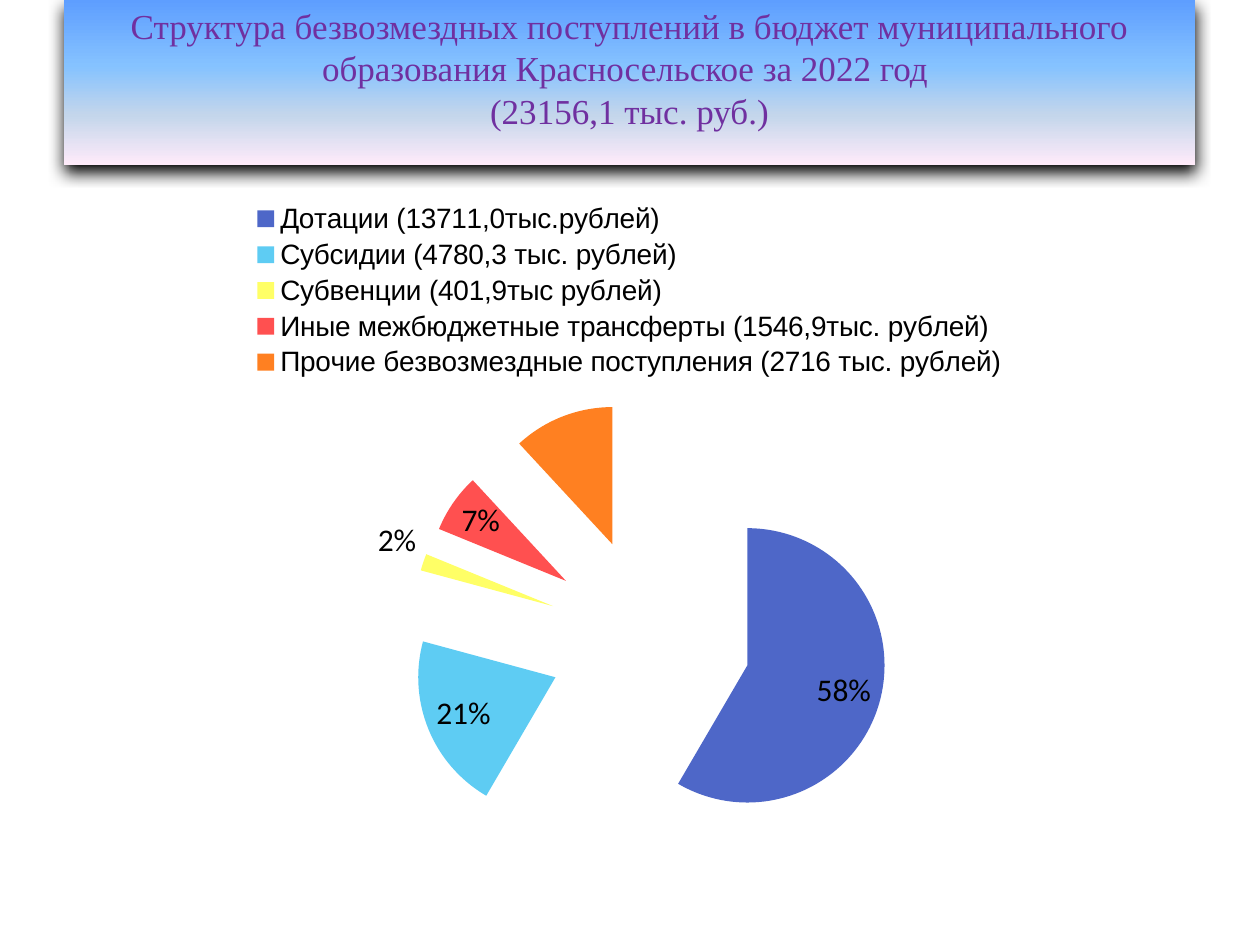
from pptx import Presentation
from pptx.chart.data import CategoryChartData
from pptx.dml.color import RGBColor
from pptx.enum.chart import XL_CHART_TYPE, XL_LABEL_POSITION, XL_LEGEND_POSITION
from pptx.enum.shapes import MSO_SHAPE
from pptx.enum.text import MSO_ANCHOR, PP_ALIGN
from pptx.oxml import parse_xml
from pptx.oxml.ns import nsdecls
from pptx.util import Emu, Pt

PX = 914400 // 126
PURPLE = RGBColor(0x70, 0x30, 0xA0)
BLACK = RGBColor(0, 0, 0)
GRADIENT = [
    (0, RGBColor(0x5E, 0x9E, 0xFF)),
    (40, RGBColor(0x85, 0xC2, 0xFF)),
    (70, RGBColor(0xC4, 0xD6, 0xEB)),
    (100, RGBColor(0xFF, 0xEB, 0xFA)),
]
REVENUES = [
    ("Дотации (13711,0тыс.рублей)", 59, RGBColor(0x4E, 0x67, 0xC8)),
    ("Субсидии (4780,3 тыс. рублей)", 21, RGBColor(0x5E, 0xCC, 0xF3)),
    ("Субвенции (401,9тыс рублей)", 2, RGBColor(0xFF, 0xFF, 0x66)),
    ("Иные межбюджетные трансферты (1546,9тыс. рублей)", 7, RGBColor(0xFF, 0x50, 0x50)),
    ("Прочие безвозмездные поступления (2716 тыс. рублей)", 12, RGBColor(0xFF, 0x80, 0x21)),
]
EXPLOSION = 74
UNLABELLED = 4


def px(length):
    """Turn px into EMU."""
    return Emu(length * PX)


def format_font(font, name, size, color):
    """Set the face, size and colour of a font."""
    font.name, font.size = name, Pt(size)
    font.color.rgb = color


def add_text(frame, text, *, font, size, color, line_spacing, align=PP_ALIGN.CENTER):
    """Write one paragraph per line of text."""
    for index, line in enumerate(text.split("\n")):
        paragraph = frame.paragraphs[0] if index == 0 else frame.add_paragraph()
        paragraph.alignment = align
        paragraph.line_spacing = Pt(line_spacing)
        run = paragraph.add_run()
        run.text = line
        format_font(run.font, font, size, color)


def add_vertical_gradient(shape, stops):
    """Fill a shape from top to bottom through the given stops."""
    marks = "".join(
        f'<a:gs pos="{position * 1000}"><a:srgbClr val="{color}"/></a:gs>'
        for position, color in stops
    )
    shape.fill.gradient()
    gradient = shape._element.spPr.find(".//{*}gradFill")
    replacement = parse_xml(
        f'<a:gradFill {nsdecls("a")} rotWithShape="1"><a:gsLst>{marks}</a:gsLst>'
        '<a:lin ang="5400000" scaled="0"/></a:gradFill>'
    )
    gradient.getparent().replace(gradient, replacement)


def add_drop_shadow(shape, blur, distance, opacity):
    """Cast a black shadow straight down."""
    shape.shadow.inherit = False
    shape._element.spPr.find("{*}effectLst").append(parse_xml(
        f'<a:outerShdw {nsdecls("a")} blurRad="{Pt(blur)}" dist="{Pt(distance)}"'
        ' dir="5400000" rotWithShape="0"><a:srgbClr val="000000">'
        f'<a:alpha val="{opacity * 1000}"/></a:srgbClr></a:outerShdw>'
    ))


def add_title_banner(slide, left, top, width, height):
    """Place the gradient banner with the title."""
    banner = slide.shapes.add_shape(
        MSO_SHAPE.RECTANGLE, px(left), px(top), px(width), px(height)
    )
    add_vertical_gradient(banner, GRADIENT)
    banner.line.fill.background()
    add_drop_shadow(banner, blur=9, distance=4, opacity=98)
    frame = banner.text_frame
    frame.word_wrap = True
    frame.vertical_anchor = MSO_ANCHOR.TOP
    frame.margin_top = px(5)
    add_text(
        frame,
        "Структура безвозмездных поступлений в бюджет муниципального "
        "образования Красносельское за 2022 год \n(23156,1 тыс. руб.)",
        font="Times New Roman", size=20, color=PURPLE, line_spacing=24,
    )


def add_revenue_pie(slide, left, top, width, height):
    """Place the exploded pie of revenues with its legend on top."""
    data = CategoryChartData()
    data.categories = [name for name, _, _ in REVENUES]
    data.add_series("Series 1", [share for _, share, _ in REVENUES])
    chart = slide.shapes.add_chart(
        XL_CHART_TYPE.PIE, px(left), px(top), px(width), px(height), data
    ).chart
    chart.has_title = False
    format_font(chart.font, "Calibri", 18, BLACK)
    chart.has_legend = True
    chart.legend.position = XL_LEGEND_POSITION.TOP
    chart.legend.include_in_layout = False
    format_font(chart.legend.font, "Arial", 16, BLACK)

    plot = chart.plots[0]
    plot.vary_by_categories = True
    series = plot.series[0]
    for index, (_, _, color) in enumerate(REVENUES):
        fill = series.points[index].format.fill
        fill.solid()
        fill.fore_color.rgb = color
    series._element.find("{*}dPt").addprevious(
        parse_xml(f'<c:explosion {nsdecls("c")} val="{EXPLOSION}"/>')
    )
    labels = series.data_labels
    labels.show_percentage = True
    labels.show_value = False
    labels.number_format = "0%"
    labels.number_format_is_linked = False
    labels.position = XL_LABEL_POSITION.BEST_FIT
    format_font(labels.font, "Calibri", 18, BLACK)
    labels._element.insert(0, parse_xml(
        f'<c:dLbl {nsdecls("c")}><c:idx val="{UNLABELLED}"/><c:delete val="1"/></c:dLbl>'
    ))


def main():
    """Build and save the slide."""
    presentation = Presentation()
    presentation.slide_width, presentation.slide_height = px(1260), px(945)
    slide = presentation.slides.add_slide(presentation.slide_layouts[6])
    add_title_banner(slide, 64, 0, 1131, 165)
    add_revenue_pie(slide, 64, 189, 1131, 706)
    presentation.save("out.pptx")


if __name__ == "__main__":
    main()
